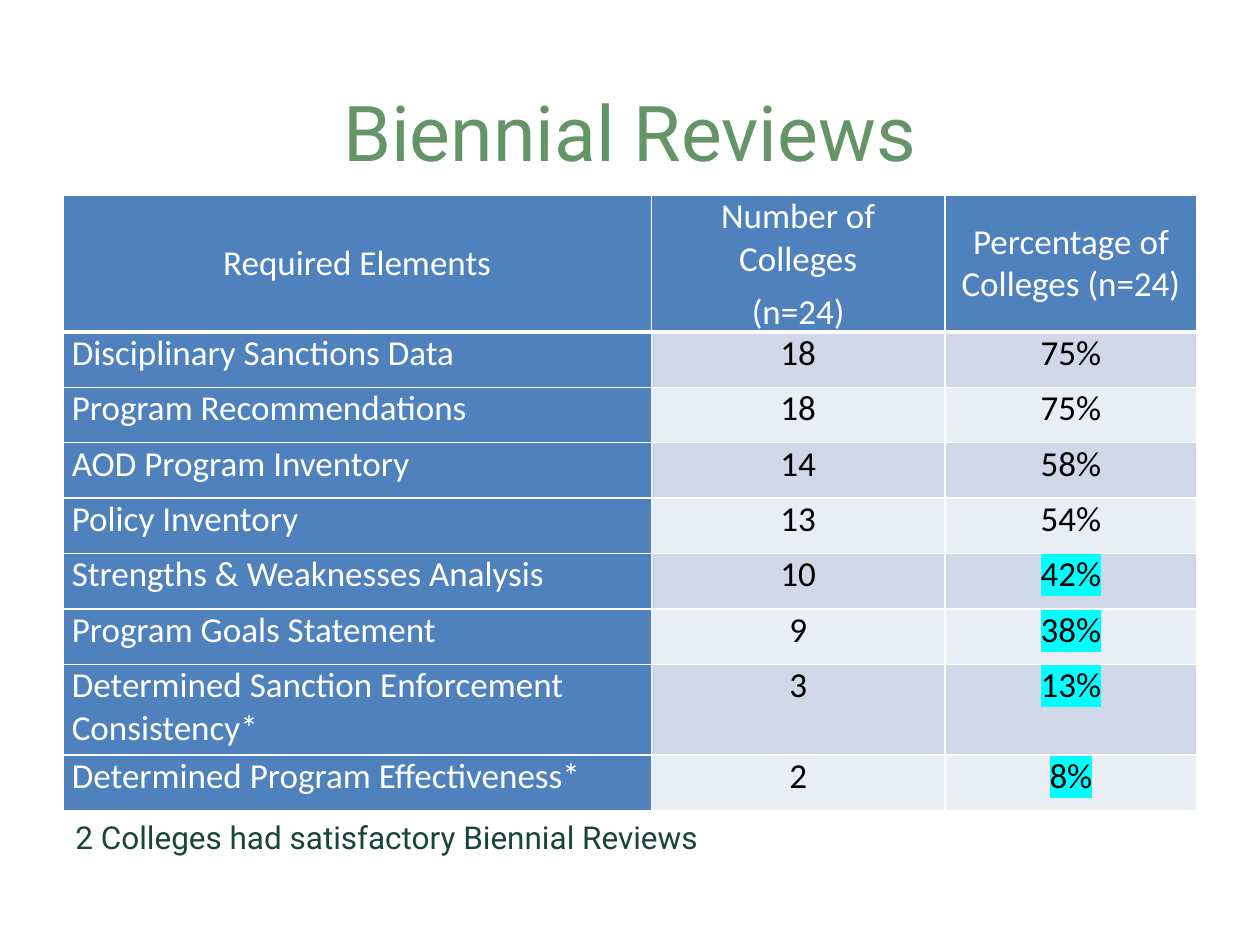
from lxml import etree
from pptx import Presentation
from pptx.dml.color import RGBColor
from pptx.enum.text import MSO_ANCHOR as ANCHOR, PP_ALIGN as ALIGN
from pptx.oxml.ns import qn
from pptx.util import Inches, Pt

W, H = 10, 7.5
MARGIN = 0.05 * W
COLUMNS = [4.67, 2.33, 2]
HEADER_H, ROW_H, TALL_ROW_H = 1.07, 0.44, 0.72
BLUE, WHITE, BLACK, CYAN = "4F81BD", "FFFFFF", "000000", "00FFFF"
BANDS = ["D0D8E8", "E9EDF4"]
HEADERS = ["Required Elements", "Number of Colleges\n(n=24)", "Percentage of Colleges (n=24)"]
REVIEWS = [
    ("Disciplinary Sanctions Data", 18, 75),
    ("Program Recommendations", 18, 75),
    ("AOD Program Inventory", 14, 58),
    ("Policy Inventory", 13, 54),
    ("Strengths & Weaknesses Analysis", 10, 42),
    ("Program Goals Statement", 9, 38),
    ("Determined Sanction Enforcement Consistency*", 3, 13),
    ("Determined Program Effectiveness*", 2, 8),
]


def rgb(value):
    return RGBColor.from_string(value)


def format_run(r, font, size, color):
    r.font.name = font
    r.font.size = Pt(size)
    r.font.color.rgb = rgb(color)


def highlight(r, color):
    mark = etree.Element(qn("a:highlight"))
    etree.SubElement(mark, qn("a:srgbClr"), val=color)
    r.font._element.find(qn("a:solidFill")).addnext(mark)


def add_text(s, text, box, size, color, align=ALIGN.LEFT, anchor=ANCHOR.TOP):
    tf = s.shapes.add_textbox(*map(Inches, box)).text_frame
    tf.word_wrap = True
    tf.vertical_anchor = anchor
    tf.text = text
    p = tf.paragraphs[0]
    p.alignment = align
    format_run(p.runs[0], "Roboto", size, color)


def add_borders(cell, bottom):
    tc_pr = cell._tc.get_or_add_tcPr()
    for side, width in (("L", 1), ("R", 1), ("T", 1), ("B", bottom)):
        ln = etree.SubElement(tc_pr, qn(f"a:ln{side}"), w=str(Pt(width)))
        fill = etree.SubElement(ln, qn("a:solidFill"))
        etree.SubElement(fill, qn("a:srgbClr"), val=WHITE)


def fill_cell(cell, text, fill, color, align=ALIGN.CENTER, anchor=ANCHOR.TOP, bottom=1, mark=None):
    add_borders(cell, bottom)
    cell.fill.solid()
    cell.fill.fore_color.rgb = rgb(fill)
    cell.margin_left = cell.margin_right = Inches(0.07)
    cell.margin_top = cell.margin_bottom = 0
    cell.vertical_anchor = anchor
    cell.text_frame.text = text
    for p in cell.text_frame.paragraphs:
        p.alignment = align
        p.space_before = p.space_after = Pt(3)
        for r in p.runs:
            format_run(r, "Calibri", 20, color)
            if mark:
                highlight(r, mark)


def add_review_table(s, top):
    heights = [HEADER_H] + [TALL_ROW_H if len(name) > 40 else ROW_H for name, _, _ in REVIEWS]
    box = (MARGIN, top, sum(COLUMNS), sum(heights))
    table = s.shapes.add_table(len(heights), len(COLUMNS), *map(Inches, box)).table
    for column, width in zip(table.columns, COLUMNS):
        column.width = Inches(width)
    for row, height in zip(table.rows, heights):
        row.height = Inches(height)
    for i, text in enumerate(HEADERS):
        fill_cell(table.cell(0, i), text, BLUE, WHITE, anchor=ANCHOR.MIDDLE, bottom=3)
    for i, (name, count, percent) in enumerate(REVIEWS, 1):
        band = BANDS[(i - 1) % 2]
        fill_cell(table.cell(i, 0), name, BLUE, WHITE, ALIGN.LEFT)
        fill_cell(table.cell(i, 1), str(count), band, BLACK)
        fill_cell(table.cell(i, 2), f"{percent}%", band, BLACK, mark=CYAN if percent < 50 else None)


def main():
    prs = Presentation()
    prs.slide_width, prs.slide_height = Inches(W), Inches(H)
    s = prs.slides.add_slide(prs.slide_layouts[6])
    add_text(s, "Biennial Reviews", (MARGIN, 0.41, 0.9 * W, H / 6), 44, "639567",
             ALIGN.CENTER, ANCHOR.MIDDLE)
    add_review_table(s, 1.55)
    add_text(s, "2 Colleges had satisfactory Biennial Reviews",
             (MARGIN, 6.44, 0.82 * W, 0.4), 18, "17453A")
    prs.save("out.pptx")


if __name__ == "__main__":
    main()
